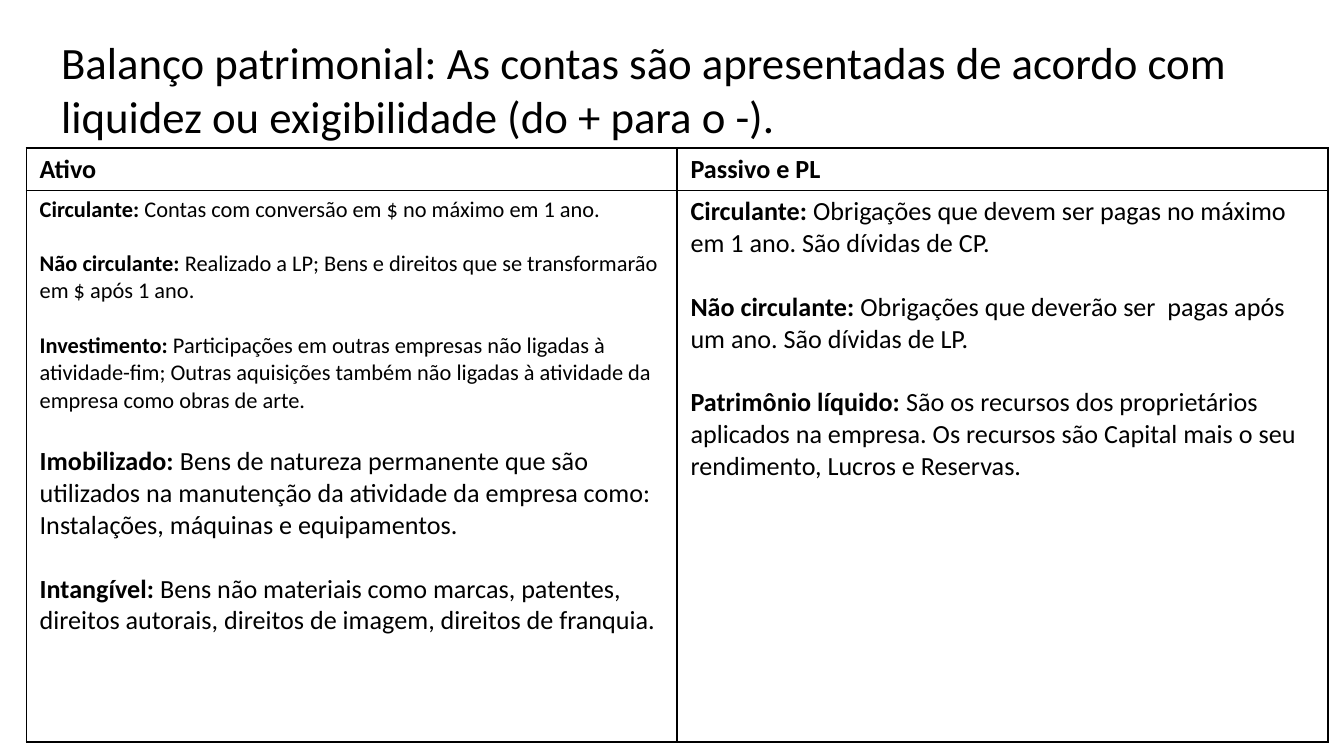
from dataclasses import dataclass

from lxml.etree import SubElement
from pptx import Presentation
from pptx.dml.color import RGBColor
from pptx.enum.text import MSO_ANCHOR as Anchor, MSO_AUTO_SIZE as AutoSize, PP_ALIGN as Align
from pptx.oxml.ns import qn
from pptx.util import Cm, Pt


@dataclass(frozen=True)
class Theme:
    font: str = "Calibri"
    ink: str = "000000"
    title: int = 24
    body: int = 14
    small: int = 12
    border: int = 1
    line_height: float = 1.22


theme = Theme()


def style_font(font, size):
    font.name = theme.font
    font.size = Pt(size)
    font.color.rgb = RGBColor.from_string(theme.ink)


def add_borders(cell):
    properties = cell._tc.get_or_add_tcPr()
    for side in ("lnL", "lnR", "lnT", "lnB"):
        line = SubElement(properties, qn(f"a:{side}"), w=str(Pt(theme.border)))
        fill = SubElement(line, qn("a:solidFill"))
        SubElement(fill, qn("a:srgbClr"), val=theme.ink)


# Accounts: term, explanation, type size
assets = [
    ("Circulante: ", "Contas com conversão em $ no máximo em 1 ano.", theme.small),
    ("Não circulante: ", "Realizado a LP; Bens e direitos que se transformarão "
     "em $ após 1 ano.", theme.small),
    ("Investimento: ", "Participações em outras empresas não ligadas à "
     "atividade-fim; Outras aquisições também não ligadas à atividade da "
     "empresa como obras de arte.", theme.small),
    ("Imobilizado: ", "Bens de natureza permanente que são utilizados na "
     "manutenção da atividade da empresa como: Instalações, máquinas e "
     "equipamentos.", theme.body),
    ("Intangível: ", "Bens não materiais como marcas, patentes, direitos "
     "autorais, direitos de imagem, direitos de franquia.", theme.body),
]
liabilities = [
    ("Circulante: ", "Obrigações que devem ser pagas no máximo em 1 ano. "
     "São dívidas de CP.", theme.body),
    ("Não circulante: ", "Obrigações que deverão ser  pagas após um ano. "
     "São dívidas de LP.", theme.body),
    ("Patrimônio líquido: ", "São os recursos dos proprietários aplicados na "
     "empresa. Os recursos são Capital mais o seu rendimento, Lucros e "
     "Reservas.", theme.body),
]
sides = [("Ativo", assets), ("Passivo e PL", liabilities)]

deck = Presentation()
deck.slide_width, deck.slide_height = Cm(25.4), Cm(14.29)
slide = deck.slides.add_slide(deck.slide_layouts[5])

# Title
title = slide.shapes.title
title.left, title.top, title.width, title.height = Cm(0.9), Cm(0.53), Cm(22.86), Cm(1.8)
heading = title.text_frame
heading.text = ("Balanço patrimonial: As contas são apresentadas de acordo com "
                "liquidez ou exigibilidade (do + para o -).")
heading.auto_size = AutoSize.NONE
heading.vertical_anchor = Anchor.TOP
heading.paragraphs[0].alignment = Align.LEFT
style_font(heading.paragraphs[0].font, theme.title)

# Balance sheet
balance = slide.shapes.add_table(2, 2, Cm(0.5), Cm(2.8), Cm(24.6), Cm(11.2)).table
balance.first_row = balance.horz_banding = False
balance.rows[0].height, balance.rows[1].height = Cm(0.78), Cm(10.42)

for column, (side_name, accounts) in enumerate(sides):
    header, details = balance.cell(0, column), balance.cell(1, column)
    for cell in (header, details):
        cell.margin_left = cell.margin_right = Cm(0.25)
        cell.margin_top = cell.margin_bottom = Cm(0.1)
        add_borders(cell)
        cell.fill.background()

    # Side name
    header.text = side_name
    style_font(header.text_frame.paragraphs[0].font, theme.body)
    header.text_frame.paragraphs[0].font.bold = True

    # Accounts, one line apart
    for index, (term, explanation, size) in enumerate(accounts):
        frame = details.text_frame
        account = frame.add_paragraph() if index else frame.paragraphs[0]
        if index:
            account.space_before = Pt(round(size * theme.line_height, 1))
        style_font(account.font, size)
        for text, bold in ((term, True), (explanation, False)):
            run = account.add_run()
            run.text = text
            run.font.bold = bold

deck.save("out.pptx")
